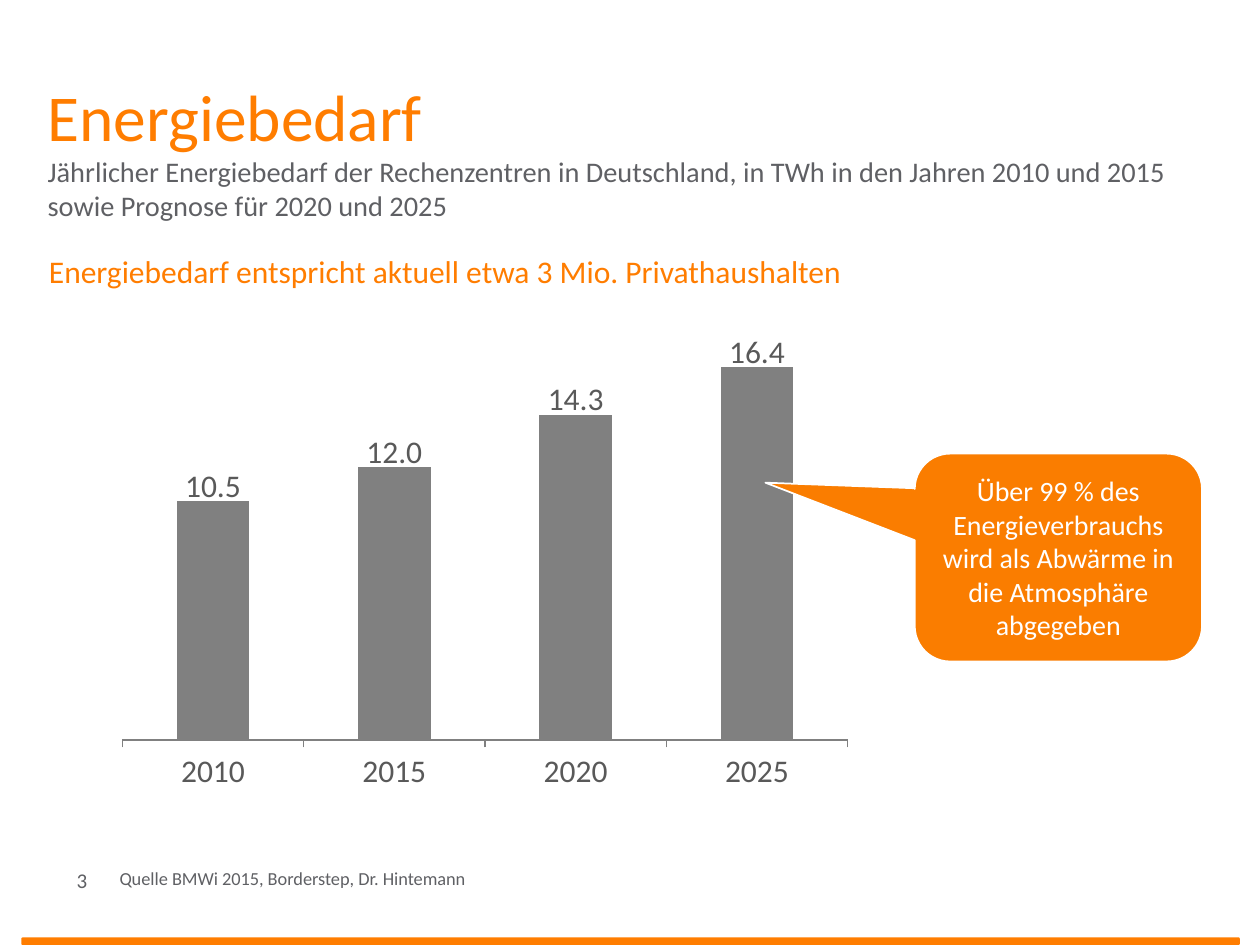
from lxml import etree
from pptx import Presentation
from pptx import util as u
from pptx.chart.data import CategoryChartData
from pptx.dml.color import RGBColor
from pptx.enum import chart as ch, shapes, text
from pptx.oxml.ns import qn

ORANGE, GREY, BAR, LABEL, WHITE = "FF7D00", "5F6064", "808080", "595959", "FFFFFF"
CALLOUT = "FA7D00"
FONT = "Calibri"
MIDDLE, TOP, BOTTOM = text.MSO_ANCHOR.MIDDLE, text.MSO_ANCHOR.TOP, text.MSO_ANCHOR.BOTTOM


def rgb(value):
    return RGBColor.from_string(value)


def manual_layout(parent, index, **values):
    layout = etree.Element(qn("c:layout"))
    manual = etree.SubElement(layout, qn("c:manualLayout"))
    for name, value in values.items():
        etree.SubElement(manual, qn(f"c:{name}")).set("val", str(value))
    parent.insert(index, layout)


class Deck:
    def __init__(self, width, height):
        self.prs = Presentation()
        self.prs.slide_width, self.prs.slide_height = u.Inches(width), u.Inches(height)
        self.s = self.prs.slides.add_slide(self.prs.slide_layouts[6])

    def box(self, x, y, w, h):
        sw, sh = self.prs.slide_width, self.prs.slide_height
        return [u.Emu(round(share * size / 100))
                for share, size in ((x, sw), (y, sh), (w, sw), (h, sh))]

    def style(self, font, size, color):
        font.name, font.size = FONT, u.Pt(size)
        font.color.rgb = rgb(color)

    def add_runs(self, sp, runs, anchor, align=text.PP_ALIGN.LEFT):
        tf = sp.text_frame
        tf.word_wrap, tf.vertical_anchor = True, anchor
        p = tf.paragraphs[0]
        p.alignment = align
        for i, (words, size, color) in enumerate(runs):
            if i:
                p.add_line_break()
            r = p.add_run()
            r.text = words
            self.style(r.font, size, color)

    def label(self, place, *runs, anchor=TOP):
        self.add_runs(self.s.shapes.add_textbox(*self.box(*place)), runs, anchor)

    def shape(self, kind, place, fill, line=None, adj=()):
        sp = self.s.shapes.add_shape(kind, *self.box(*place))
        sp.shadow.inherit = False
        sp.fill.solid()
        sp.fill.fore_color.rgb = rgb(fill)
        if line:
            sp.line.color.rgb, sp.line.width = rgb(line), u.Pt(1)
        else:
            sp.line.fill.background()
        for i, value in enumerate(adj):
            sp.adjustments[i] = value
        return sp

    def columns(self, place, categories, values, top):
        data = CategoryChartData(number_format="#,##0.0")
        data.categories = categories
        data.add_series("Series 1", values)
        chart = self.s.shapes.add_chart(
            ch.XL_CHART_TYPE.COLUMN_STACKED, *self.box(*place), data).chart
        chart.has_legend = chart.has_title = False
        self.style(chart.font, 18, LABEL)

        axis = chart.category_axis
        axis.major_tick_mark = ch.XL_TICK_MARK.OUTSIDE
        axis.format.line.color.rgb = rgb(BAR)
        self.style(axis.tick_labels.font, 18, LABEL)
        scale = chart.value_axis
        scale.minimum_scale, scale.maximum_scale = 0, top
        scale.has_major_gridlines = scale.visible = False

        plot = chart.plots[0]
        plot.gap_width, plot.overlap, plot.vary_by_categories = 150, 100, False
        series = plot.series[0]
        series.format.fill.solid()
        series.format.fill.fore_color.rgb = rgb(BAR)
        labels = series.data_labels
        labels.show_value = True
        labels.number_format, labels.number_format_is_linked = "#,##0.0", False
        labels.position = ch.XL_LABEL_POSITION.INSIDE_END
        self.style(labels.font, 18, LABEL)
        for i in range(len(values)):
            point = series.points[i].data_label
            self.style(point.font, 18, LABEL)
            point.position = ch.XL_LABEL_POSITION.INSIDE_END
        for item in chart.element.iter(qn("c:dLbl")):
            manual_layout(item, 1, x=0, y=-0.08)
            fmt = etree.Element(qn("c:numFmt"), formatCode="#,##0.0", sourceLinked="0")
            item.insert(2, fmt)

        area = next(chart.element.iter(qn("c:plotArea")))
        for old in area.findall(qn("c:layout")):
            area.remove(old)
        manual_layout(area, 0, layoutTarget="inner", xMode="edge", yMode="edge",
                      x=0.02, y=0.05, w=0.95, h=0.84)


def main():
    deck = Deck(10, 7.5)
    deck.label((5.1, 91.2, 5.8, 4), ("3", 12, GREY))
    deck.shape(shapes.MSO_SHAPE.ROUNDED_RECTANGLE, (1.7, 99.2, 96.7, 0.8), ORANGE)
    deck.label((2.8, 10.8, 93.7, 10),
               ("Energiebedarf", 37.4, ORANGE),
               ("Jährlicher Energiebedarf der Rechenzentren in Deutschland, in TWh in den "
                "Jahren 2010 und 2015 sowie Prognose für 2020 und 2025", 16.2, GREY),
               anchor=MIDDLE)
    deck.columns((8.5, 32.4, 60.6, 51.6), ["2010", "2015", "2020", "2025"],
                 [10.5, 12, 14.3, 16.4], 18)
    callout = deck.shape(shapes.MSO_SHAPE.ROUNDED_RECTANGULAR_CALLOUT,
                         (72.6, 48, 22.8, 22), CALLOUT, WHITE, (-1.02, -0.36, 0.17))
    deck.add_runs(callout, [("Über 99 % des Energieverbrauchs wird als Abwärme in die "
                             "Atmosphäre abgegeben", 16, WHITE)],
                  MIDDLE, text.PP_ALIGN.CENTER)
    deck.label((8.5, 84.7, 89.2, 10),
               ("Quelle BMWi 2015, Borderstep, Dr. Hintemann", 10.5, GREY), anchor=BOTTOM)
    deck.label((2.9, 26, 75, 5.3),
               ("Energiebedarf entspricht aktuell etwa 3 Mio. Privathaushalten", 18, ORANGE))
    deck.prs.save("out.pptx")


if __name__ == "__main__":
    main()
